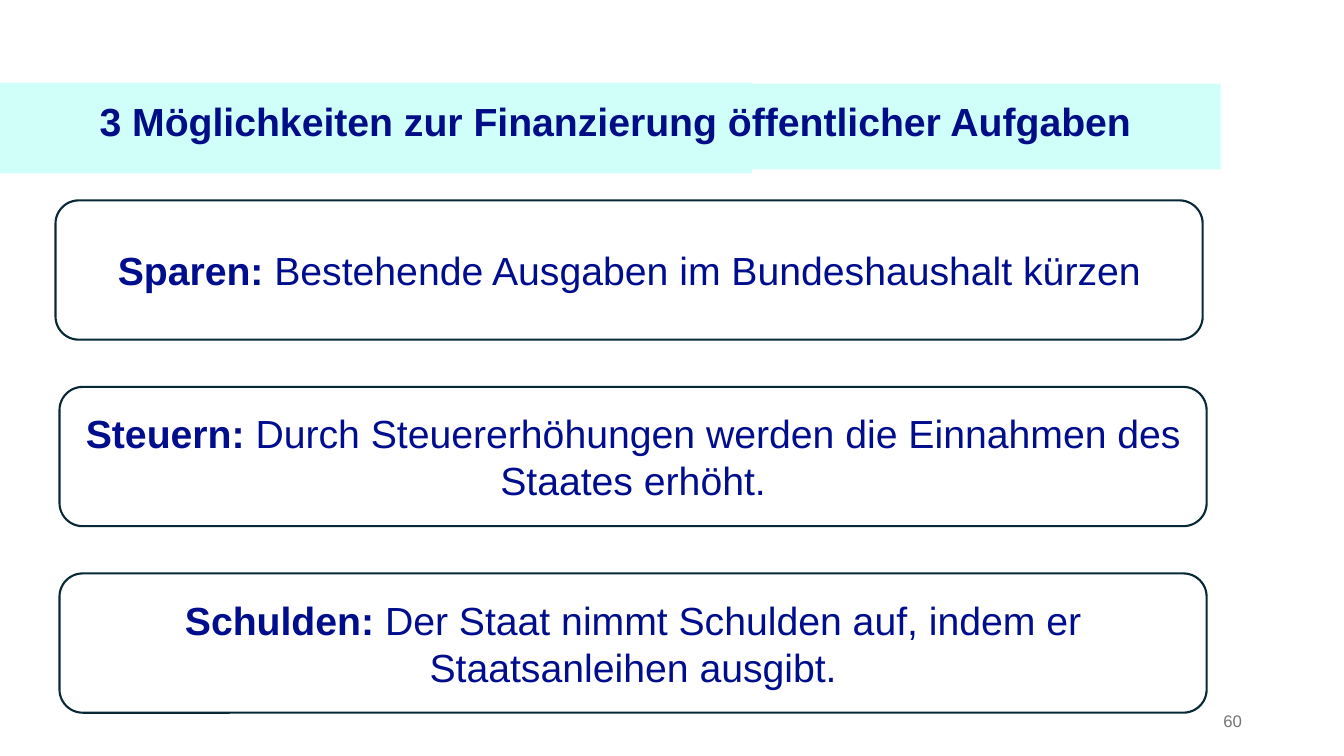
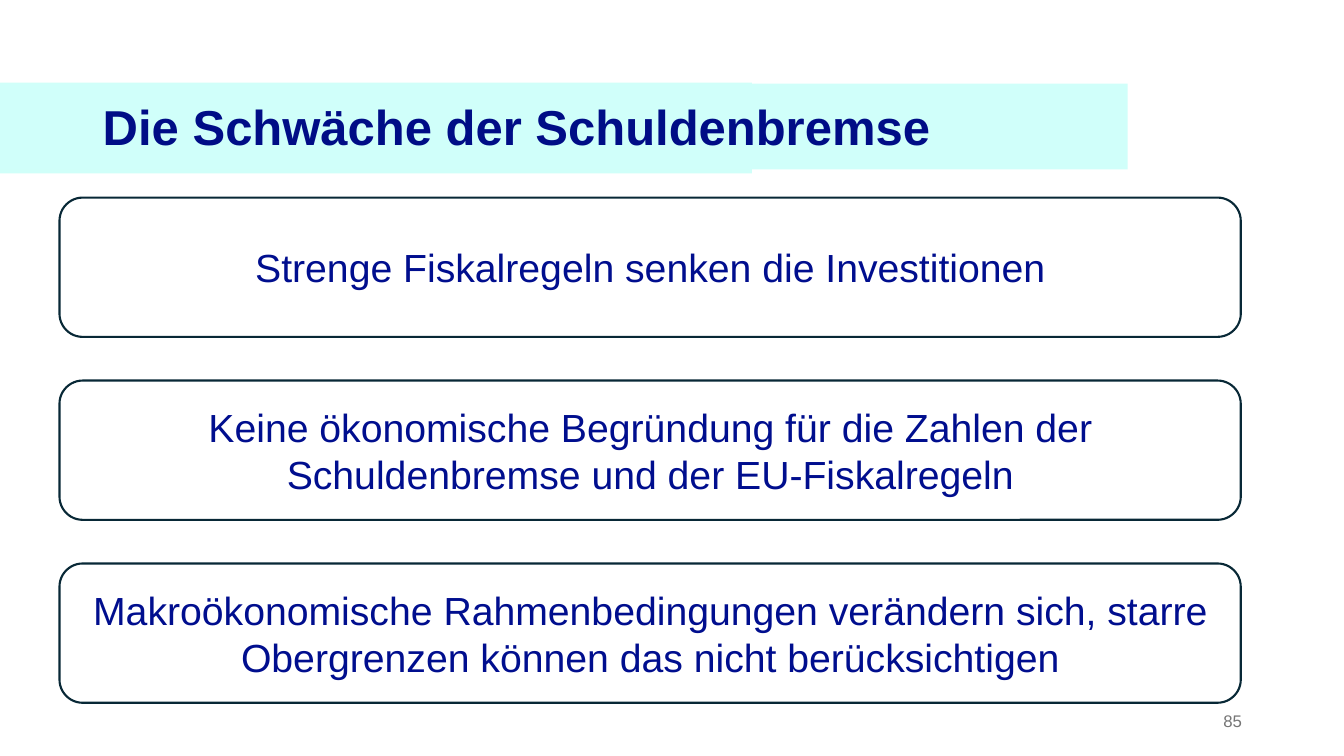
from pptx import Presentation
from pptx.dml.color import RGBColor
from pptx.enum import shapes, text
from pptx.util import Cm, Pt

FONT = "Arial"
BAND, BAND_FRONT = "D0FFF9", "D0FFFA"
TITLE, BODY, OUTLINE, GREY, WHITE = "000D86", "000E8E", "082836", "757575", "FFFFFF"
BOX_HEIGHT = 3.51

# What differs between the slides; lengths in cm, statements as (bold lead, text)
SLIDES = [
    {
        "title": "3 Möglichkeiten zur Finanzierung öffentlicher Aufgaben",
        "title_at": (2.26, 2.11, 28.02, 2.16), "title_size": 28, "title_spacing": 0.7,
        "band_width": 30.76, "number": "60",
        "lefts": (1.4, 1.5, 1.5), "top": 5.05, "step": 4.7, "width": 28.91,
        "statements": [
            ("Sparen: ", "Bestehende Ausgaben im Bundeshaushalt kürzen"),
            ("Steuern: ", "Durch Steuererhöhungen werden die Einnahmen des Staates erhöht."),
            ("Schulden: ", "Der Staat nimmt Schulden auf, indem er Staatsanleihen ausgibt."),
        ],
    },
    {
        "title": "Die Schwäche der Schuldenbremse",
        "title_at": (2.34, 2.18, 29.21, 2.16), "title_size": 35, "title_spacing": 0.9,
        "band_width": 28.42, "number": "85",
        "lefts": (1.5, 1.5, 1.5), "top": 4.98, "step": 4.61, "width": 29.77,
        "statements": [
            ("", "Strenge Fiskalregeln senken die Investitionen"),
            ("", "Keine ökonomische Begründung für die Zahlen der Schuldenbremse "
                 "und der EU-Fiskalregeln"),
            ("", "Makroökonomische Rahmenbedingungen verändern sich, starre "
                 "Obergrenzen können das nicht berücksichtigen"),
        ],
    },
]


def color(hex_value):
    return RGBColor.from_string(hex_value)


def write(shape, runs, size, hex_value, **paragraph_format):
    """Write (text, bold) runs into one vertically centred paragraph."""
    frame = shape.text_frame
    frame.word_wrap = True
    frame.vertical_anchor = text.MSO_ANCHOR.MIDDLE
    paragraph = frame.paragraphs[0]
    for name, value in paragraph_format.items():
        setattr(paragraph, name, value)
    for words, bold in runs:
        run = paragraph.add_run()
        run.text = words
        font_format = {"name": FONT, "size": Pt(size), "bold": bold}
        for name, value in font_format.items():
            setattr(run.font, name, value)
        run.font.color.rgb = color(hex_value)


presentation = Presentation()
presentation.slide_width, presentation.slide_height = Cm(33.87), Cm(19.05)

for content in SLIDES:
    slide = presentation.slides.add_slide(presentation.slide_layouts[6])

    # Title bands
    bands = [(2.08, 18.95, 2.29, BAND), (2.11, content["band_width"], 2.16, BAND_FRONT)]
    for top, width, height, fill in bands:
        band = slide.shapes.add_shape(
            shapes.MSO_SHAPE.RECTANGLE, Cm(0), Cm(top), Cm(width), Cm(height))
        band.shadow.inherit = False
        band.fill.solid()
        band.fill.fore_color.rgb = color(fill)
        band.line.fill.background()

    # Title
    title = slide.shapes.add_textbox(*map(Cm, content["title_at"]))
    write(title, [(content["title"], True)], content["title_size"], TITLE,
          line_spacing=content["title_spacing"])

    # Statement boxes
    for row, (left, (lead, statement)) in enumerate(
            zip(content["lefts"], content["statements"])):
        box = slide.shapes.add_shape(
            shapes.MSO_SHAPE.ROUNDED_RECTANGLE, Cm(left),
            Cm(content["top"] + row * content["step"]),
            Cm(content["width"]), Cm(BOX_HEIGHT))
        box.shadow.inherit = False
        box.fill.solid()
        box.fill.fore_color.rgb = color(WHITE)
        box.line.color.rgb = color(OUTLINE)
        box.line.width = Pt(1.5)
        runs = [(lead, True)] if lead else []
        write(box, runs + [(statement, False)], 28, BODY, alignment=text.PP_ALIGN.CENTER)

    # Page number
    number = slide.shapes.add_textbox(Cm(23.93), Cm(17.65), Cm(7.62), Cm(1.02))
    write(number, [(content["number"], False)], 12, GREY, alignment=text.PP_ALIGN.RIGHT)

presentation.save("out.pptx")
